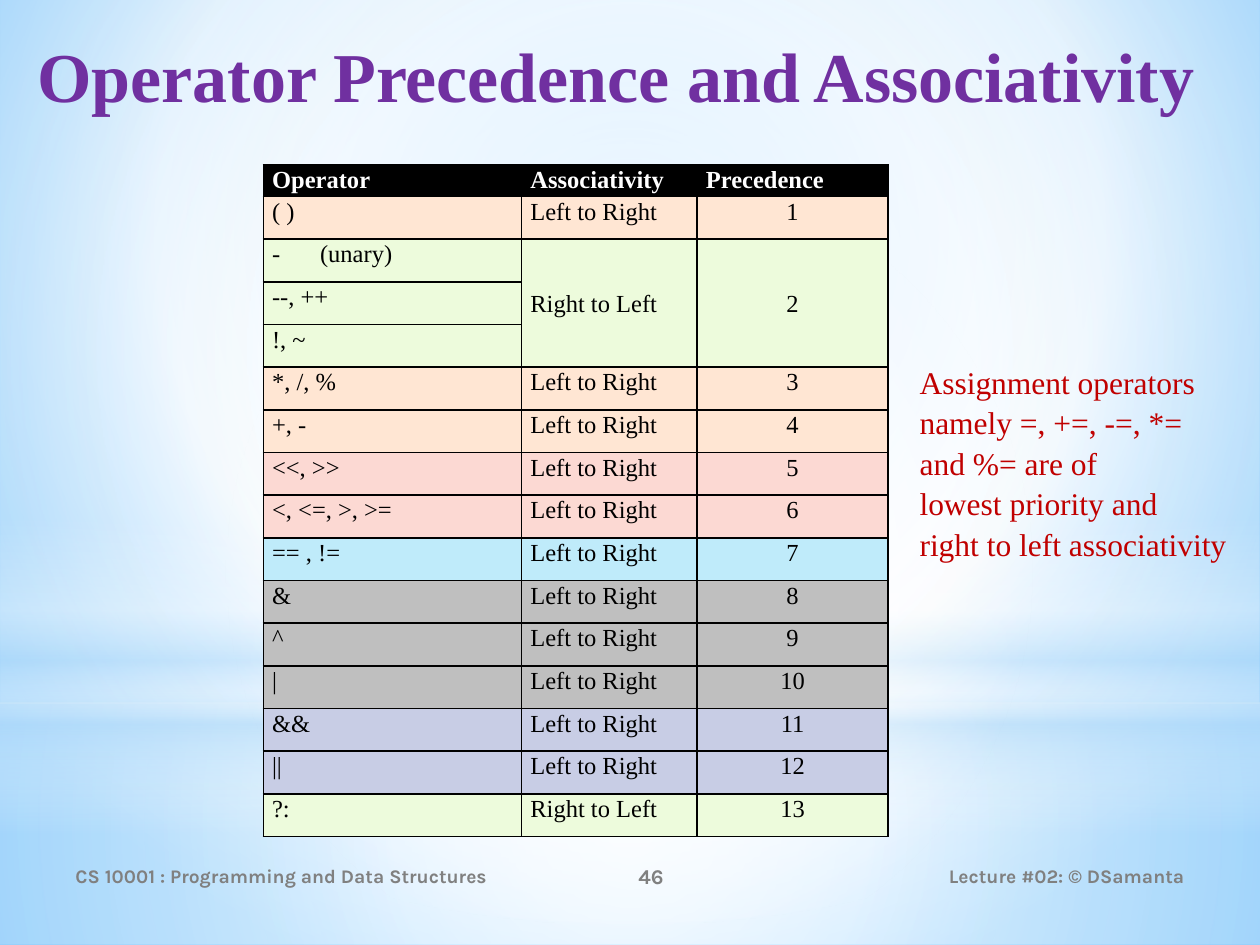
from pptx import Presentation
from pptx.dml.color import RGBColor
from pptx.enum import shapes, text
from pptx.oxml import parse_xml
from pptx.oxml.ns import nsdecls
from pptx.util import Pt

BLACK = RGBColor(0x00, 0x00, 0x00)
WHITE = RGBColor(0xFF, 0xFF, 0xFF)
PURPLE = RGBColor(0x70, 0x30, 0xA0)
RED = RGBColor(0xC0, 0x00, 0x00)
GRAY = RGBColor(0x80, 0x80, 0x80)
PEACH = RGBColor(0xFF, 0xE6, 0xD3)
LIME = RGBColor(0xED, 0xFB, 0xDC)
PINK = RGBColor(0xFC, 0xD9, 0xD3)
SKY = RGBColor(0xBF, 0xEB, 0xFA)
SILVER = RGBColor(0xBF, 0xBF, 0xBF)
LAVENDER = RGBColor(0xC8, 0xCD, 0xE5)
PALE_BLUE = RGBColor(0xB4, 0xDC, 0xFA)
BG_INNER = RGBColor(0x9E, 0xD5, 0xFF)
BG_OUTER = RGBColor(0x5B, 0xB9, 0xFF)

SERIF, SANS = "Times New Roman", "Karla"
LEFT, CENTER, RIGHT = text.PP_ALIGN.LEFT, text.PP_ALIGN.CENTER, text.PP_ALIGN.RIGHT
TOP, MIDDLE = text.MSO_ANCHOR.TOP, text.MSO_ANCHOR.MIDDLE


def set_gradient(parent, stops, focus):
    """Swap the solid fill for a gradient: circular around focus, or vertical."""
    marks = "".join(
        f'<a:gs pos="{place * 1000}"><a:srgbClr val="{color}">'
        f'<a:alpha val="{opacity * 1000}"/></a:srgbClr></a:gs>'
        for place, color, opacity in stops)
    if focus:
        sides = " ".join(f'{side}="{value * 1000}"' for side, value in zip("ltrb", focus))
        course = f'<a:path path="circle"><a:fillToRect {sides}/></a:path>'
    else:
        course = '<a:lin ang="5400000" scaled="0"/>'
    solid = parent.xpath(".//a:solidFill")[0]
    solid.getparent().replace(solid, parse_xml(
        f'<a:gradFill {nsdecls("a")} rotWithShape="1"><a:gsLst>{marks}</a:gsLst>{course}</a:gradFill>'))


def write(frame, lines, size, font, color, bold=False, align=LEFT, spacing=None):
    frame.text = "\n".join(lines)
    for para in frame.paragraphs:
        para.alignment = align
        para.line_spacing = spacing
        for span in para.runs:
            span.font.size = Pt(size)
            span.font.name = font
            span.font.bold = bold
            span.font.color.rgb = color


deck = Presentation()
deck.slide_width, deck.slide_height = Pt(720), Pt(540)
page = deck.slides.add_slide(deck.slide_layouts[6])

# Background
page.background.fill.solid()
page.background.fill.fore_color.rgb = WHITE
set_gradient(page.element.xpath(".//p:bgPr")[0],
             [(0, BG_INNER, 100), (60, WHITE, 100), (100, BG_OUTER, 100)], (20, 10, 20, 60))

# Translucent glow layers
RECT, OVAL = shapes.MSO_SHAPE.RECTANGLE, shapes.MSO_SHAPE.OVAL
MID = (50, 50, 50, 50)
layers = [
    (RECT, 401.76, 138.24, [(0, WHITE, 91), (37, WHITE, 76), (100, PALE_BLUE, 79)], MID),
    (RECT, 0, 401.76, [(0, WHITE, 89), (48, WHITE, 62), (100, PALE_BLUE, 79)], MID),
    (RECT, 296.64, 180, [(0, WHITE, 0), (29, WHITE, 30), (45, PALE_BLUE, 40),
                         (55, WHITE, 26), (65, PALE_BLUE, 60), (100, WHITE, 0)], None),
    (OVAL, 126, 401.76, [(0, WHITE, 100), (56, WHITE, 0)], MID),
]
for kind, top, height, stops, focus in layers:
    layer = page.shapes.add_shape(kind, 0, Pt(top), Pt(720), Pt(height))
    layer.shadow.inherit = False
    layer.line.fill.background()
    layer.fill.solid()
    layer.fill.fore_color.rgb = WHITE
    set_gradient(layer.element.spPr, stops, focus)

# Title, footer and side note
note = ["Assignment operators", "namely =, +=, -=, *=", "and %= are of",
        "lowest priority and", "right to left associativity"]
boxes = [
    ((14.4, 15.12, 686.16, 90), ["Operator Precedence and Associativity"],
     40, SERIF, PURPLE, True, LEFT, None, TOP, True),
    ((36, 486, 264, 28.8), ["CS 10001 : Programming and Data Structures"],
     11, SANS, GRAY, True, LEFT, None, MIDDLE, True),
    ((300, 486, 144, 28.8), ["46"], 12, SANS, GRAY, True, CENTER, None, MIDDLE, True),
    ((486, 486, 198, 28.8), ["Lecture #02: © DSamanta"],
     11, SANS, GRAY, True, RIGHT, None, MIDDLE, True),
    ((518.4, 202.32, 191.52, 123.84), note, 18, SERIF, RED, False, LEFT, 1.07, TOP, False),
]
for place, lines, size, font, color, bold, align, spacing, anchor, wrap in boxes:
    box = page.shapes.add_textbox(*map(Pt, place))
    box.text_frame.word_wrap = wrap
    box.text_frame.vertical_anchor = anchor
    write(box.text_frame, lines, size, font, color, bold, align, spacing)

# Operator table
L2R, R2L = "Left to Right", "Right to Left"
rows = [
    (BLACK, "Operator", "Associativity", "Precedence"),
    (PEACH, "( )", L2R, "1"),
    (LIME, "(unary)", R2L, "2"),
    (LIME, "--, ++", "", ""),
    (LIME, "!, ~", "", ""),
    (PEACH, "*, /, %", L2R, "3"),
    (PEACH, "+, -", L2R, "4"),
    (PINK, "<<, >>", L2R, "5"),
    (PINK, "<, <=, >, >=", L2R, "6"),
    (SKY, "== , !=", L2R, "7"),
    (SILVER, "&", L2R, "8"),
    (SILVER, "^", L2R, "9"),
    (SILVER, "|", L2R, "10"),
    (LAVENDER, "&&", L2R, "11"),
    (LAVENDER, "||", L2R, "12"),
    (LIME, "?:", R2L, "13"),
]
table = page.shapes.add_table(len(rows), 3, Pt(150.48), Pt(94.32), Pt(357), Pt(383.76)).table
for column, width in zip(table.columns, (147.6, 100.3, 109.1)):
    column.width = Pt(width)
for r, (color, *words) in enumerate(rows):
    header = r == 0
    table.rows[r].height = Pt(13.7 if header else 24.4)
    for c, word in enumerate(words):
        cell = table.cell(r, c)
        cell.fill.solid()
        cell.fill.fore_color.rgb = color
        cell.margin_left = cell.margin_right = Pt(5)
        cell.margin_top = cell.margin_bottom = 0
        write(cell.text_frame, [word], 14, SERIF, WHITE if header else BLACK, header,
              CENTER if c == 2 and not header else LEFT, 1.07)
        for i, side in enumerate("LRTB"):
            cell._tc.get_or_add_tcPr().insert(i, parse_xml(
                f'<a:ln{side} {nsdecls("a")} w="12700"><a:solidFill>'
                f'<a:srgbClr val="{BLACK}"/></a:solidFill></a:ln{side}>'))

# Precedence 2 covers three operator rows
for c in (1, 2):
    table.cell(2, c).merge(table.cell(4, c))
    table.cell(2, c).vertical_anchor = MIDDLE

# Dash bullet before "(unary)"
bullet = table.cell(2, 0).text_frame.paragraphs[0]._p.get_or_add_pPr()
bullet.set("marL", str(Pt(27.4)))
bullet.set("indent", str(-Pt(27.4)))
bullet.append(parse_xml(f'<a:buFont {nsdecls("a")} typeface="{SERIF}"/>'))
bullet.append(parse_xml(f'<a:buChar {nsdecls("a")} char="-"/>'))

deck.save("out.pptx")
